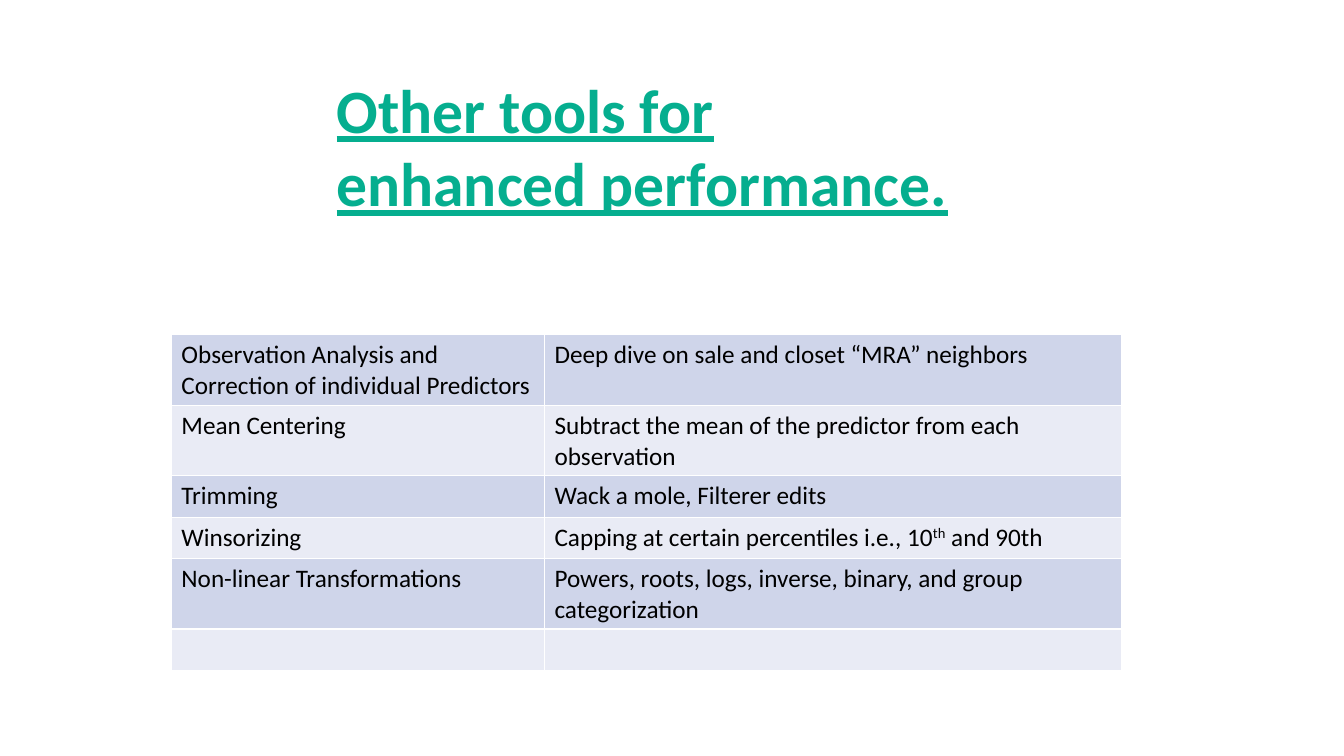
from typing import NamedTuple

from lxml import etree
from pptx import Presentation
from pptx.dml.color import RGBColor
from pptx.oxml import ns
from pptx.util import Inches, Pt

FONT = "Calibri"
GREEN = RGBColor(0x05, 0xAE, 0x8F)
BLACK = RGBColor(0x00, 0x00, 0x00)
WHITE = RGBColor(0xFF, 0xFF, 0xFF)
BANDS = (RGBColor(0xCF, 0xD5, 0xEA), RGBColor(0xE9, 0xEB, 0xF5))
WIDTHS = (3.7, 5.72)
ROW_HEIGHT = 0.41


class Tool(NamedTuple):
    name: str = ""
    use: str = ""
    power: str = ""  # superscript that follows the use
    rest: str = ""


TOOLS = (
    Tool("Observation Analysis and Correction of individual Predictors",
         "Deep dive on sale and closet “MRA” neighbors"),
    Tool("Mean Centering",
         "Subtract the mean of the predictor from each observation"),
    Tool("Trimming", "Wack a mole, Filterer edits"),
    Tool("Winsorizing", "Capping at certain percentiles i.e., 10", "th", " and 90th"),
    Tool("Non-linear Transformations",
         "Powers, roots, logs, inverse, binary, and group categorization"),
    Tool(),
)


def style(para, size: float, color: RGBColor) -> None:
    para.font.name = FONT
    para.font.size = Pt(size)
    para.font.color.rgb = color


def edge(cell) -> None:
    """Give the cell thin white borders on all four sides."""
    props = cell._tc.get_or_add_tcPr()
    for spot, side in enumerate(("lnL", "lnR", "lnT", "lnB")):
        line = etree.Element(ns.qn(f"a:{side}"), w=str(Pt(1)))
        fill = etree.SubElement(line, ns.qn("a:solidFill"))
        etree.SubElement(fill, ns.qn("a:srgbClr"), val=str(WHITE))
        props.insert(spot, line)


def add_title(slide) -> None:
    box = slide.shapes.add_textbox(Inches(2.68), Inches(0.66), Inches(7.01), Inches(1.58))
    box.text_frame.word_wrap = True
    para = box.text_frame.paragraphs[0]
    para.text = "Other tools for enhanced performance."
    para.space_after = Pt(8)
    props = para._p.get_or_add_pPr()
    props.set("marL", str(Inches(0.56)))
    props.set("indent", "0")
    style(para, 44, GREEN)
    para.font.bold = True
    para.font.underline = True


def add_tools(slide) -> None:
    frame = slide.shapes.add_table(
        len(TOOLS), len(WIDTHS), Inches(1.7), Inches(3.32),
        Inches(sum(WIDTHS)), Inches(ROW_HEIGHT * len(TOOLS)))
    table = frame.table
    table.first_row = False
    for col, width in zip(table.columns, WIDTHS):
        col.width = Inches(width)
    for index, (row, tool) in enumerate(zip(table.rows, TOOLS)):
        row.height = Inches(ROW_HEIGHT)
        for cell, words in zip(row.cells, (tool[:1], tool[1:])):
            cell.fill.solid()
            cell.fill.fore_color.rgb = BANDS[index % 2]
            edge(cell)
            para = cell.text_frame.paragraphs[0]
            style(para, 18, BLACK)
            for spot, word in enumerate(words):
                if word:
                    run = para.add_run()
                    run.text = word
                    if spot == 1:
                        run._r.get_or_add_rPr().set("baseline", "30000")


def main() -> None:
    deck = Presentation()
    deck.slide_width, deck.slide_height = Inches(13.33), Inches(7.5)
    slide = deck.slides.add_slide(deck.slide_layouts[6])
    add_title(slide)
    add_tools(slide)
    deck.save("out.pptx")


if __name__ == "__main__":
    main()
